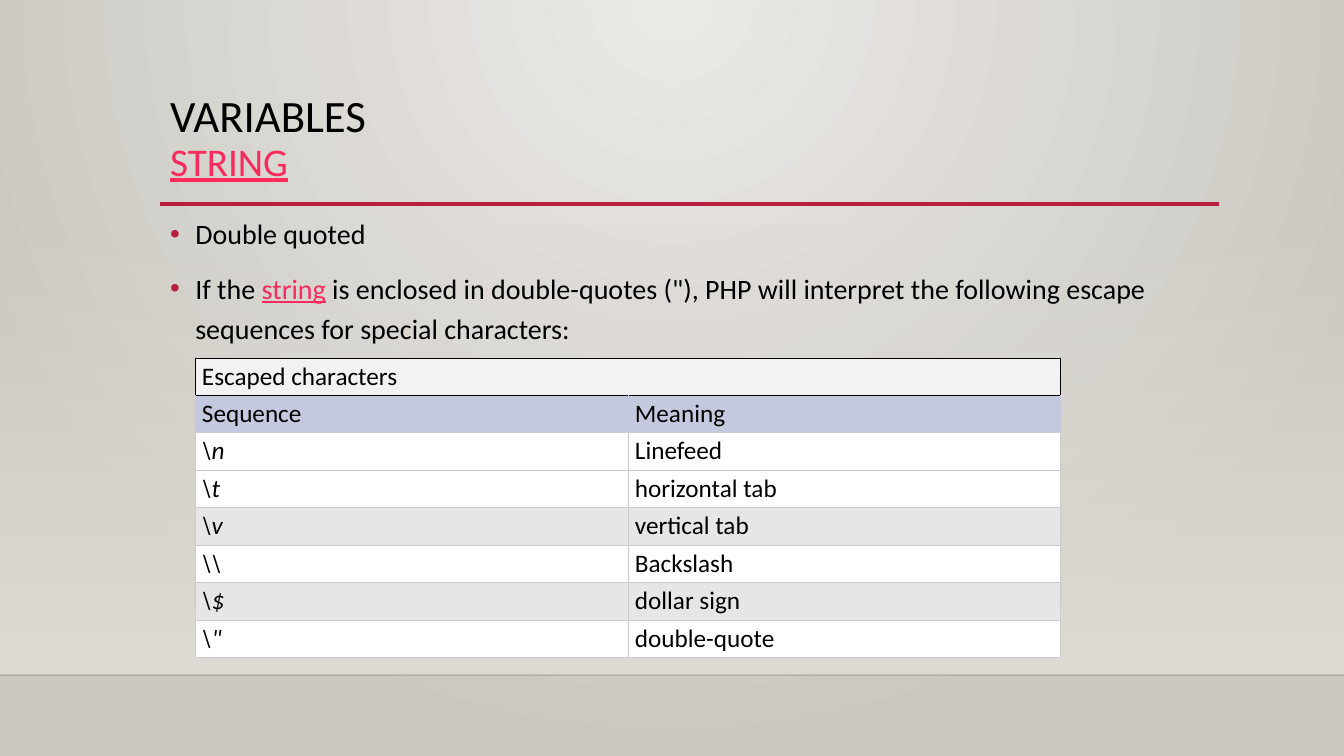
"""Build the slide on escape sequences in double-quoted strings."""
from lxml.etree import SubElement
from pptx import Presentation
from pptx.dml.color import RGBColor
from pptx.enum.shapes import MSO_CONNECTOR, MSO_SHAPE
from pptx.enum.text import MSO_ANCHOR, MSO_AUTO_SIZE, PP_ALIGN
from pptx.oxml.ns import qn
from pptx.util import Emu, Pt

PX = 914400 / 100.8
COLORS = {
    "text": "000000", "accent": "B71E42", "link": "FA2B5C", "floor": "000001",
    "glow": "ECEAE7", "edge": "CAC7C1", "haze": "DFDBD5",
    "caption": "F2F2F2", "heading": "C4C9DF", "plain": "FFFFFF",
    "band": "E6E6E6", "grid": "CCCCCC",
}


def px(*lengths):
    return [Emu(round(length * PX)) for length in lengths]


def style(run, size, color="text", italic=None):
    run.font.name = "Calibri"
    run.font.size = Pt(size)
    run.font.color.rgb = RGBColor.from_string(COLORS[color])
    run.font.underline = True if color == "link" else None
    run.font.italic = italic


deck = Presentation()
deck.slide_width, deck.slide_height = px(1344, 756)
slide = deck.slides.add_slide(deck.slide_layouts[1])
title, body = slide.shapes.title, slide.placeholders[1]

backdrop = slide.shapes.add_shape(MSO_SHAPE.RECTANGLE, *px(0, 223, 1344, 452))
backdrop.shadow.inherit = False
backdrop.line.fill.background()
title.element.addprevious(backdrop.element)
for fill, colors in ((slide.background.fill, ("glow", "edge")),
                     (backdrop.fill, ("haze", "haze"))):
    fill.gradient()
    for stop, color, position in zip(fill.gradient_stops, colors, (0, 1)):
        stop.color.rgb = RGBColor.from_string(COLORS[color])
        stop.position = position
backdrop.fill.gradient_angle = 270
clear_stop = backdrop.element.find(".//" + qn("a:srgbClr"))
SubElement(clear_stop, qn("a:alpha"), val="0")

glow = slide.element.find(".//" + qn("p:bgPr")).find(qn("a:gradFill"))
glow.remove(glow.find(qn("a:lin")))
circle = SubElement(glow, qn("a:path"))
circle.set("path", "circle")
SubElement(circle, qn("a:fillToRect"), l="43000", t="0", r="43000", b="100000")

for left, right, y, color, width, alpha in (
    (0, 1344, 675, "floor", 1, 20000),
    (160, 1219, 204, "accent", 2.5, 100000),
):
    rule = slide.shapes.add_connector(MSO_CONNECTOR.STRAIGHT, *px(left, y, right, y))
    rule.line.width = Pt(width)
    rule.line.color.rgb = RGBColor.from_string(COLORS[color])
    SubElement(rule.element.find(".//" + qn("a:srgbClr")), qn("a:alpha"), val=str(alpha))
    SubElement(rule.element.spPr, qn("a:effectLst"))
    title.element.addprevious(rule.element)

for holder, box in ((title, (160, 89, 1059, 116)), (body, (160, 205, 1059, 470))):
    holder.left, holder.top, holder.width, holder.height = px(*box)
    holder.text_frame.auto_size = MSO_AUTO_SIZE.NONE
    holder.text_frame.vertical_anchor = MSO_ANCHOR.TOP
    holder.text_frame.word_wrap = True

title.text_frame.text = "VARIABLES\vSTRING"
heading = title.text_frame.paragraphs[0]
heading.alignment = PP_ALIGN.LEFT
heading.line_spacing = 0.9
SubElement(title.element.find(".//" + qn("a:br")), qn("a:rPr"), sz="3200")
style(heading.runs[0], 32)
style(heading.runs[1], 28, "link")

points = (
    (("Double quoted", "text"),),
    (("If the ", "text"), ("string", "link"),
     (" is enclosed in double-quotes (\"), PHP will interpret the following "
      "escape sequences for special characters:", "text")),
)
for index, pieces in enumerate(points):
    point = body.text_frame.add_paragraph() if index else body.text_frame.paragraphs[0]
    layout = point._p.get_or_add_pPr()
    layout.set("marL", "228600")
    layout.set("indent", "-228600")
    SubElement(SubElement(layout, qn("a:buClr")), qn("a:srgbClr"), val=COLORS["accent"])
    SubElement(layout, qn("a:buFont"), typeface="Arial")
    SubElement(layout, qn("a:buChar"), char="•")
    point.line_spacing = 1.2
    point.space_before = Pt(10 if index else 0)
    for words, color in pieces:
        run = point.add_run()
        run.text = words
        style(run, 20, color)

rows = (
    ("caption", "Escaped characters", ""),
    ("heading", "Sequence", "Meaning"),
    ("plain", "\\n", "Linefeed"),
    ("plain", "\\t", "horizontal tab"),
    ("band", "\\v", "vertical tab"),
    ("plain", "\\\\", "Backslash"),
    ("band", "\\$", "dollar sign"),
    ("plain", "\\\"", "double-quote"),
)
borders = {
    "caption": {"L": ("text", 0.75), "R": ("text", 0.75),
                "T": ("text", 0.75), "B": ("text", 1.5)},
    "heading": {"L": ("heading", 0.75), "R": ("heading", 0.75),
                "T": ("text", 1.5), "B": ("grid", 0.75)},
}
grid_borders = dict.fromkeys("LRTB", ("grid", 0.75))
escapes = slide.shapes.add_table(len(rows), 2, *px(195, 358, 866, 300)).table
escapes.first_row = escapes.horz_banding = False
escapes.cell(0, 0).merge(escapes.cell(0, 1))
for r, (kind, *texts) in enumerate(rows):
    for c, words in enumerate(texts):
        cell = escapes.cell(r, c)
        cell.margin_left, cell.margin_right, cell.margin_top, cell.margin_bottom = px(7, 7, 3, 3)
        cell.vertical_anchor = MSO_ANCHOR.MIDDLE if r < 2 else MSO_ANCHOR.TOP
        for side, (color, width) in borders.get(kind, grid_borders).items():
            edge = SubElement(cell._tc.get_or_add_tcPr(), qn("a:ln" + side), w=str(Pt(width)))
            SubElement(SubElement(edge, qn("a:solidFill")), qn("a:srgbClr"), val=COLORS[color])
        cell.fill.solid()
        cell.fill.fore_color.rgb = RGBColor.from_string(COLORS[kind])
        cell.text_frame.text = words
        for run in cell.text_frame.paragraphs[0].runs:
            style(run, 18, italic=r > 1 and c == 0)

deck.save("out.pptx")
